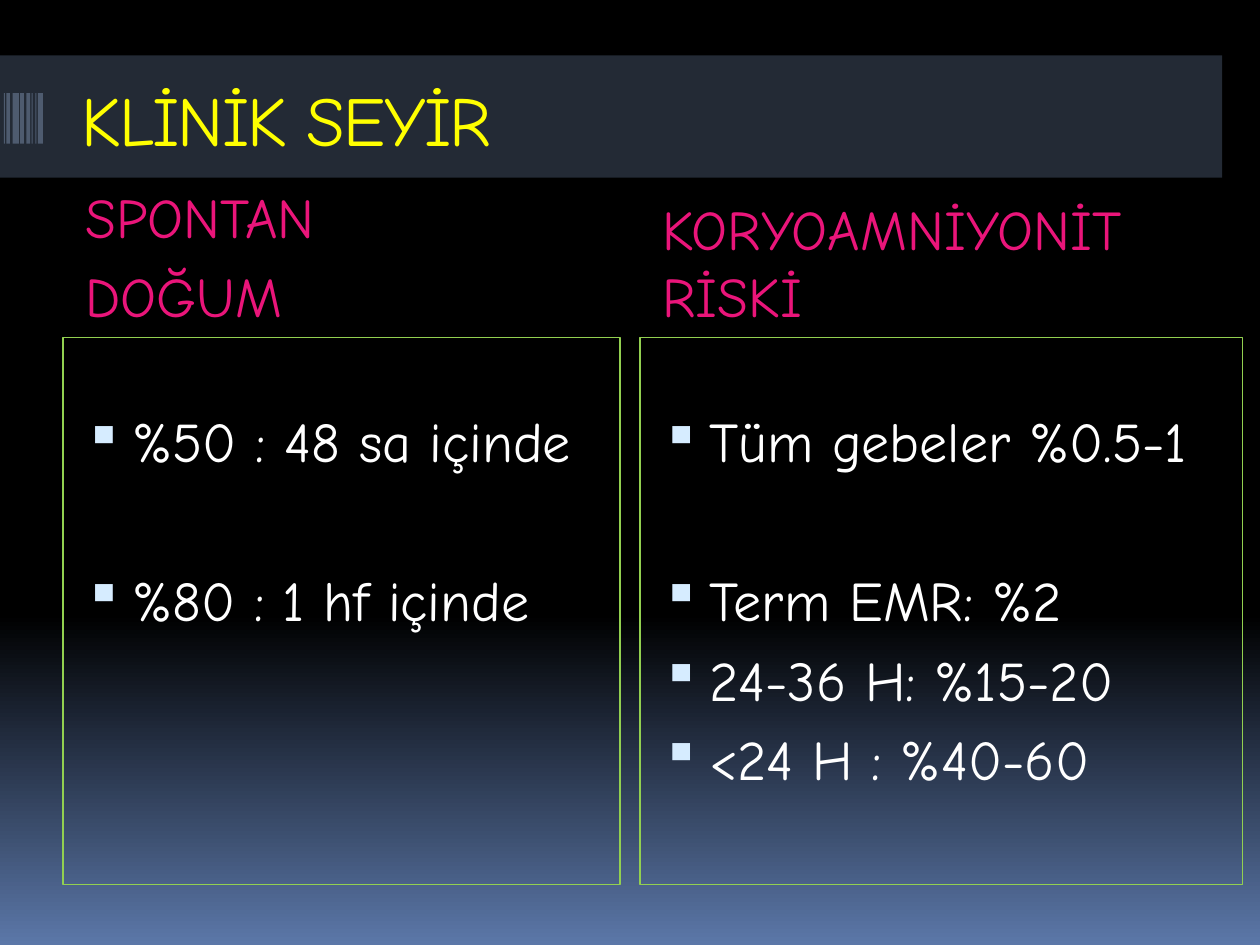
"""Build the KLİNİK SEYİR slide with two headed bullet panels."""
import pptx
import pptx.dml.color
import pptx.enum.shapes
import pptx.enum.text
import pptx.oxml.ns
import pptx.util
from lxml import etree

Inches = pptx.util.Inches
Pt = pptx.util.Pt
ANCHOR = pptx.enum.text.MSO_ANCHOR
FONT = "Comic Neue"
COLORS = {
    "night": "000000",
    "dusk": "5B77A8",
    "band": "586A86",
    "stripe": "4E5B6F",
    "title": "FFFF00",
    "heading": "EA157A",
    "body": "FFFFFF",
    "border": "92D050",
    "bullet": "D6ECFF",
}
STRIPES = [(0.03, 0.01), (0.05, 0.03), (0.1, 0.05), (0.16, 0.03),
           (0.21, 0.03), (0.25, 0.01), (0.28, 0.01), (0.3, 0.04)]
GAP, WIDE_GAP = 7, 52.3


def rgb(name):
    return pptx.dml.color.RGBColor.from_string(COLORS[name])


def add_child(parent, tag, **attributes):
    child = etree.SubElement(parent, pptx.oxml.ns.qn(tag))
    for key, value in attributes.items():
        child.set(key, str(value))
    return child


def paint_background(page):
    fill = page.background.fill
    fill.gradient()
    fill.gradient_angle = 270
    for stop, name, position in zip(fill.gradient_stops, ("night", "dusk"), (0.65, 1)):
        stop.color.rgb = rgb(name)
        stop.position = position


def add_rectangle(page, place, fill=None, line=None, alpha=None):
    box = page.shapes.add_shape(pptx.enum.shapes.MSO_SHAPE.RECTANGLE, *map(Inches, place))
    box.shadow.inherit = False
    if fill:
        box.fill.solid()
        box.fill.fore_color.rgb = rgb(fill)
    else:
        box.fill.background()
    if line:
        box.line.color.rgb = rgb(line)
        box.line.width = Pt(0.75)
    else:
        box.line.fill.background()
    if alpha:
        color = box.fill._xPr.find(".//" + pptx.oxml.ns.qn("a:srgbClr"))
        add_child(color, "a:alpha", val=alpha * 1000)
    return box


def set_bullet(para):
    properties = para._p.get_or_add_pPr()
    add_child(add_child(properties, "a:buClr"), "a:srgbClr", val=COLORS["bullet"])
    add_child(properties, "a:buSzPct", val=95000)
    add_child(properties, "a:buChar", char="▪")


def write_text(box, lines, color, size=32, gaps=None, anchor=ANCHOR.TOP,
               indent=0, hanging=0, top=0.05, bullets=False, spacing=None):
    frame = box.text_frame
    frame.word_wrap = True
    frame.vertical_anchor = anchor
    frame.margin_top = Inches(top)
    for index, text in enumerate(lines):
        para = frame.paragraphs[0] if index == 0 else frame.add_paragraph()
        para.alignment = pptx.enum.text.PP_ALIGN.LEFT
        para.space_before = Pt(gaps[index] if gaps else GAP * (index > 0))
        properties = para._p.get_or_add_pPr()
        properties.set("marL", str(Inches(indent)))
        properties.set("indent", str(Inches(hanging)))
        if bullets:
            set_bullet(para)
        span = para.add_run()
        span.text = text
        span.font.name = FONT
        span.font.size = Pt(size)
        span.font.color.rgb = rgb(color)
        if spacing:
            span._r.get_or_add_rPr().set("spc", str(spacing * 100))


def add_text(page, place, lines, color, **style):
    box = page.shapes.add_textbox(*map(Inches, place))
    write_text(box, lines, color, **style)


def add_panel(page, left, width, lines, gaps):
    box = add_rectangle(page, (left, 2.68, width, 4.34), line="border")
    write_text(box, lines, "body", gaps=gaps, indent=0.45, hanging=-0.38,
               top=0.55, bullets=True)


def main():
    deck = pptx.Presentation()
    deck.slide_width, deck.slide_height = Inches(10), Inches(7.5)
    page = deck.slides.add_slide(deck.slide_layouts[6])
    paint_background(page)
    add_rectangle(page, (0, 0.44, 9.7, 0.97), fill="band", alpha=40)
    for left, width in STRIPES:
        add_rectangle(page, (left, 0.74, width, 0.4), fill="stripe")
    add_text(page, (0.55, 0.56, 8.5, 1), ["KLİNİK SEYİR"], "title", size=40, spacing=-1)
    heading = {"anchor": ANCHOR.MIDDLE, "indent": 0.08}
    add_text(page, (0.5, 1.56, 4.42, 0.94), ["SPONTAN", "DOĞUM"], "heading", **heading)
    add_text(page, (5.08, 1.47, 4.78, 1.21), ["KORYOAMNİYONİT RİSKİ"], "heading", **heading)
    add_panel(page, 0.5, 4.42, ["%50 : 48 sa içinde", "%80 : 1 hf içinde"], [0, WIDE_GAP])
    add_panel(page, 5.08, 4.78,
              ["Tüm gebeler %0.5-1", "Term EMR: %2", "24-36 H: %15-20", "<24 H : %40-60"],
              [0, WIDE_GAP, GAP, GAP])
    deck.save("out.pptx")


if __name__ == "__main__":
    main()
